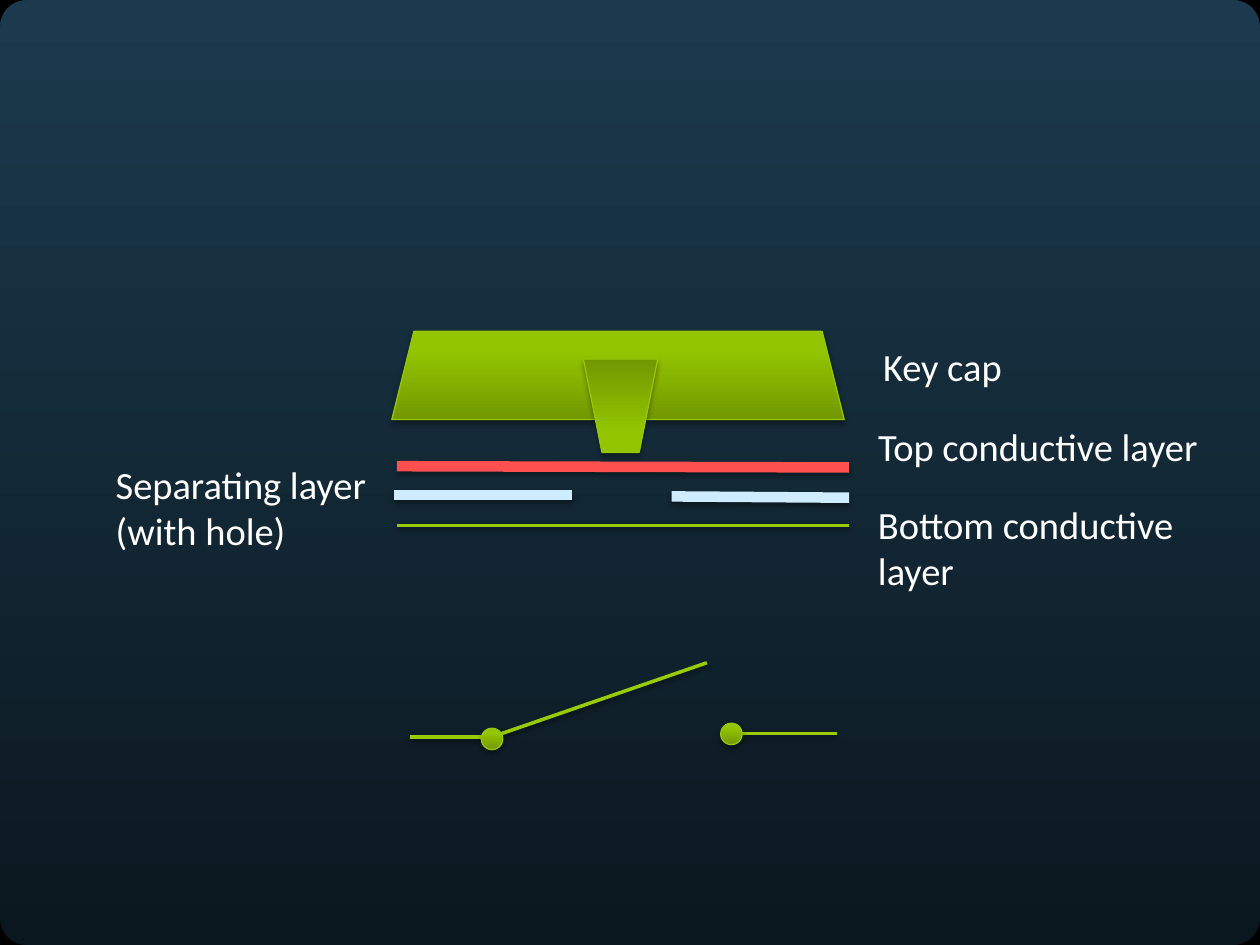
import math

from lxml import etree
from pptx import Presentation
from pptx.dml.color import RGBColor
from pptx.enum import shapes, text
from pptx.oxml.ns import qn
from pptx.util import Inches, Pt

BLACK = RGBColor(0x00, 0x00, 0x00)
WHITE = RGBColor(0xFF, 0xFF, 0xFF)
RED = RGBColor(0xFF, 0x50, 0x50)
PALE_BLUE = RGBColor(0xCF, 0xEC, 0xFF)
GREEN = RGBColor(0x99, 0xCC, 0x00)
OUTLINE_GREEN = RGBColor(0x96, 0xC8, 0x00)
NAVY_STOPS = [(0, RGBColor(0x0B, 0x17, 0x1F)), (100, RGBColor(0x1B, 0x3A, 0x4D))]
GREEN_STOPS = [
    (0, RGBColor(0x72, 0x98, 0x00)),
    (80, RGBColor(0x94, 0xC6, 0x00)),
    (100, RGBColor(0x95, 0xC7, 0x00)),
]
WIDTH, HEIGHT = 10, 7.5


def set_gradient(fill, element, stops):
    fill.gradient()
    fill.gradient_angle = 90
    stop_list = next(element.iter(qn("a:gsLst")))
    for stop in list(stop_list):
        stop_list.remove(stop)
    for position, color in stops:
        stop = etree.SubElement(stop_list, qn("a:gs"), pos=str(position * 1000))
        etree.SubElement(stop, qn("a:srgbClr"), val=str(color))


def add_shadow(shape, opacity, distance):
    effects = etree.SubElement(shape.element.spPr, qn("a:effectLst"))
    shadow = etree.SubElement(
        effects, qn("a:outerShdw"), blurRad=str(Pt(3.1)), dist=str(Pt(distance)),
        dir="5400000", algn="ctr", rotWithShape="0")
    color = etree.SubElement(shadow, qn("a:srgbClr"), val=str(BLACK))
    etree.SubElement(color, qn("a:alpha"), val=str(opacity * 1000))


def add_line(slide, start, end, color, width):
    points = [Inches(value) for value in (*start, *end)]
    connector = slide.shapes.add_connector(shapes.MSO_CONNECTOR.STRAIGHT, *points)
    connector.line.color.rgb = color
    connector.line.width = Pt(width)
    add_shadow(connector, 38, 1.6)


def add_green_shape(slide, kind, box, rotation=0):
    shape = slide.shapes.add_shape(kind, *[Inches(value) for value in box])
    shape.rotation = rotation
    set_gradient(shape.fill, shape.element, GREEN_STOPS)
    shape.line.color.rgb = OUTLINE_GREEN
    shape.line.width = Pt(0.75)
    add_shadow(shape, 35, 1.8)


def add_corners(slide, left, top, width, height, radius=0.28, overhang=0.07):
    inset = radius - overhang
    right, bottom = left + width - inset, top + height - inset
    centers = [(right, top + inset), (left + inset, top + inset),
               (left + inset, bottom), (right, bottom)]
    for quarter, (x, y) in enumerate(centers):
        angles = [math.radians(90 * quarter + step * 7.5) for step in range(13)]
        points = [(Inches(x + radius * math.cos(angle)), Inches(y - radius * math.sin(angle)))
                  for angle in angles]
        builder = slide.shapes.build_freeform(*points[0])
        builder.add_line_segments(points[1:], close=False)
        corner = builder.convert_to_shape()
        corner.fill.background()
        corner.line.color.rgb = BLACK
        corner.line.width = Pt(10)
        corner.shadow.inherit = False


def add_key(slide, left, top, width, height):
    right, bottom = left + width, top + height
    layers = [
        (left + 0.04, right, 1.07, 1.08, RED, 6),
        (left + 0.02, left + 1.43, 1.3, 1.3, PALE_BLUE, 6),
        (right - 1.41, right, 1.31, 1.32, PALE_BLUE, 6),
        (left + 0.04, right, height, height, GREEN, 2),
    ]
    for start, end, start_drop, end_drop, color, weight in layers:
        add_line(slide, (start, top + start_drop), (end, top + end_drop), color, weight)
    trapezoid = shapes.MSO_SHAPE.TRAPEZOID
    add_green_shape(slide, trapezoid, (left, top, width - 0.04, 0.7))
    add_green_shape(slide, trapezoid, (left + 1.52, top + 0.22, 0.59, 0.74), 180)


def add_switch(slide, left, top, width, height):
    right, bottom = left + width, top + height
    dot = 0.17
    left_wire, right_wire = bottom - 0.1, bottom - 0.13
    for start, end in [
        ((left, left_wire), (left + 0.63, left_wire)),
        ((left + 0.65, left_wire), (left + 2.36, top)),
        ((right - 0.82, right_wire), (right, right_wire)),
    ]:
        add_line(slide, start, end, GREEN, 2)
    for x, y in [(left + 0.57, bottom - dot), (left + 2.47, bottom - dot - 0.04)]:
        add_green_shape(slide, shapes.MSO_SHAPE.OVAL, (x, y, dot, dot))


def add_label(slide, wording, left, top, width, height):
    box = slide.shapes.add_textbox(*[Inches(value) for value in (left, top, width, height)])
    frame = box.text_frame
    frame.word_wrap = False
    frame.auto_size = text.MSO_AUTO_SIZE.SHAPE_TO_FIT_TEXT
    paragraph = frame.paragraphs[0]
    paragraph.text = wording
    for run in paragraph.runs:
        run.font.color.rgb = WHITE
        for name, value in {"name": "Calibri", "size": Pt(22)}.items():
            setattr(run.font, name, value)


def main():
    presentation = Presentation()
    presentation.slide_width = Inches(WIDTH)
    presentation.slide_height = Inches(HEIGHT)
    slide = presentation.slides.add_slide(presentation.slide_layouts[6])
    set_gradient(slide.background.fill, slide.element, NAVY_STOPS)
    add_corners(slide, 0, 0, WIDTH, HEIGHT)
    add_key(slide, 3.11, 2.63, 3.63, 1.54)
    add_switch(slide, 3.25, 5.26, 3.39, 0.69)
    for label in [
        ("Key cap", 6.91, 2.67, 1.25, 0.47),
        ("Top conductive layer", 6.87, 3.31, 2.85, 0.47),
        ("Bottom conductive \vlayer", 6.87, 3.93, 2.64, 0.84),
        ("Separating layer\v(with hole)", 0.82, 3.61, 2.26, 0.84),
    ]:
        add_label(slide, *label)
    presentation.save("out.pptx")


if __name__ == "__main__":
    main()
